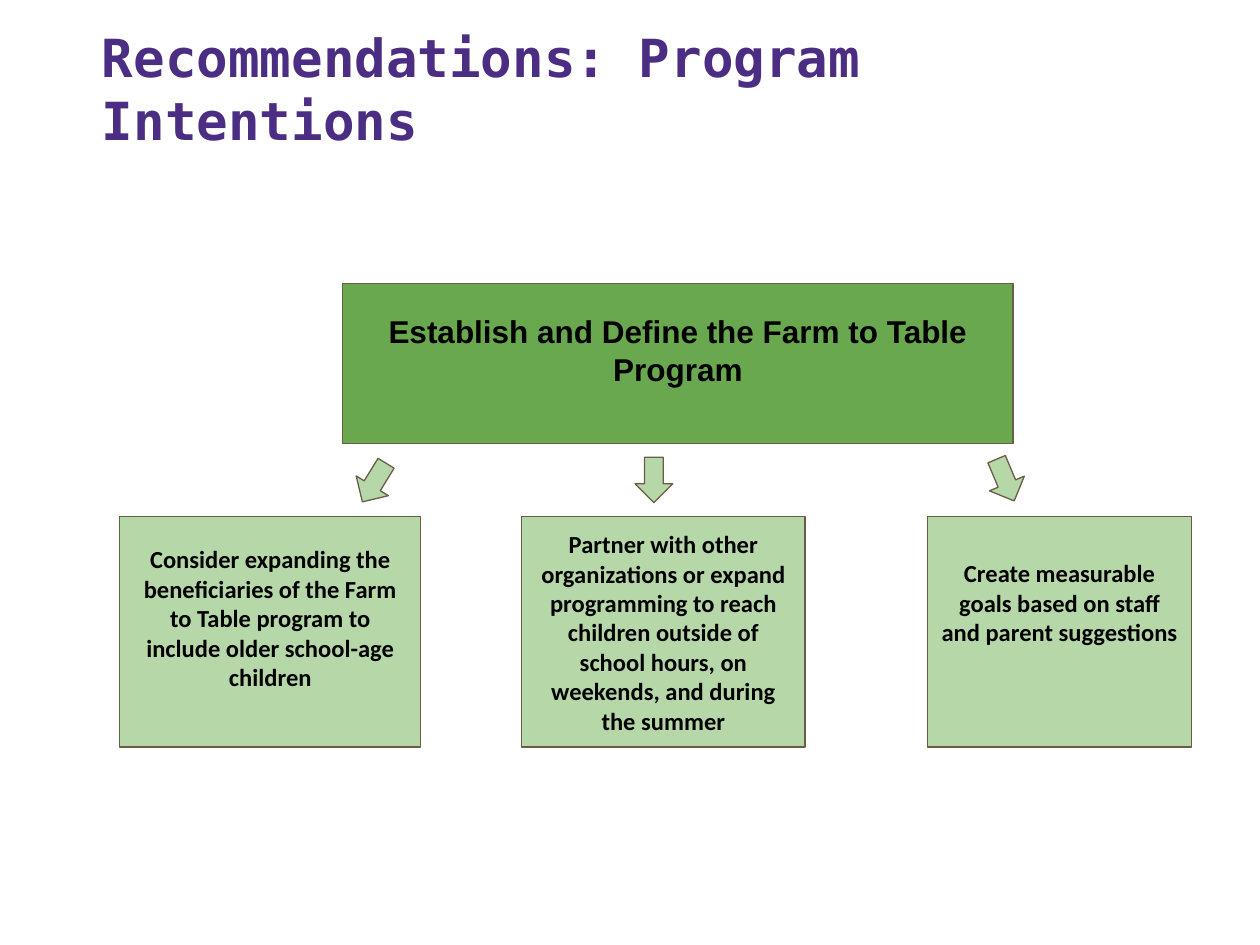
from dataclasses import dataclass

from pptx import Presentation
from pptx.dml.color import RGBColor
from pptx.enum.shapes import MSO_SHAPE as Preset
from pptx.enum.text import MSO_ANCHOR as Anchor, PP_ALIGN as Align
from pptx.util import Inches, Pt

PAGE_WIDTH, PAGE_HEIGHT = Inches(10), Inches(7.5)
PURPLE, BLACK, BROWN = "4B2E83", "000000", "695D46"
GREEN, PALE_GREEN = "6AA84F", "B6D7A8"
GOAL_TOP, GOAL_HEIGHT = 54.67, 24.4


@dataclass(frozen=True)
class Area:
    """A rectangle in percent of the page width and height."""
    left: float
    top: float
    width: float
    height: float

    def lengths(self) -> tuple[int, int, int, int]:
        return (round(PAGE_WIDTH * self.left / 100), round(PAGE_HEIGHT * self.top / 100),
                round(PAGE_WIDTH * self.width / 100), round(PAGE_HEIGHT * self.height / 100))


@dataclass(frozen=True)
class Lettering:
    font: str
    size: int
    color: str = BLACK
    align: Align = Align.CENTER


@dataclass(frozen=True)
class Card:
    text: str
    area: Area
    fill: str
    lettering: Lettering
    text_top: float  # inches from the card's top edge to its text


@dataclass(frozen=True)
class Arrow:
    left: float
    top: float
    rotation: float


TITLE = Lettering("DejaVu Sans Mono", 30, PURPLE, Align.LEFT)
HEADING = Lettering("Arial", 18)
BODY = Lettering("Calibri", 14)

CARDS = [
    Card("Establish and Define the Farm to Table Program",
         Area(27.2, 30, 53.2, 16.93), GREEN, HEADING, 0.23),
    Card("Consider expanding the beneficiaries of the Farm to Table program "
         "to include older school-age children",
         Area(9.5, GOAL_TOP, 23.9, GOAL_HEIGHT), PALE_GREEN, BODY, 0.22),
    Card("Partner with other organizations or expand programming to reach children "
         "outside of school hours, on weekends, and during the summer",
         Area(41.4, GOAL_TOP, 22.5, GOAL_HEIGHT), PALE_GREEN, BODY, 0.1),
    Card("Create measurable goals based on staff and parent suggestions",
         Area(73.6, GOAL_TOP, 21, GOAL_HEIGHT), PALE_GREEN, BODY, 0.33),
]
ARROWS = [Arrow(28.2, 48.67, 31.6), Arrow(50.4, 48.4, 0), Arrow(78.3, 48.4, 337.2)]


def rgb(color: str) -> RGBColor:
    return RGBColor.from_string(color)


def write(frame, text: str, lettering: Lettering) -> None:
    frame.word_wrap = True
    para = frame.paragraphs[0]
    para.alignment = lettering.align
    span = para.add_run()
    span.text = text
    span.font.name = lettering.font
    span.font.size = Pt(lettering.size)
    span.font.bold = True
    span.font.color.rgb = rgb(lettering.color)


def draw_shape(page, preset: Preset, area: Area, fill: str):
    shape = page.shapes.add_shape(preset, *area.lengths())
    shape.shadow.inherit = False
    shape.fill.solid()
    shape.fill.fore_color.rgb = rgb(fill)
    shape.line.color.rgb = rgb(BROWN)
    shape.line.width = Pt(0.75)
    return shape


def draw_title(page, text: str) -> None:
    box = page.shapes.add_textbox(*Area(7.1, 2.27, 89.5, 14.4).lengths())
    box.text_frame.vertical_anchor = Anchor.BOTTOM
    write(box.text_frame, text, TITLE)


def draw_card(page, card: Card) -> None:
    frame = draw_shape(page, Preset.RECTANGLE, card.area, card.fill).text_frame
    frame.vertical_anchor = Anchor.TOP
    frame.margin_left = frame.margin_right = frame.margin_bottom = Inches(0.1)
    frame.margin_top = Inches(card.text_top)
    write(frame, card.text, card.lettering)


def draw_arrow(page, arrow: Arrow) -> None:
    area = Area(arrow.left, arrow.top, 3, 4.8)
    draw_shape(page, Preset.DOWN_ARROW, area, PALE_GREEN).rotation = arrow.rotation


def main() -> None:
    deck = Presentation()
    deck.slide_width, deck.slide_height = PAGE_WIDTH, PAGE_HEIGHT
    page = deck.slides.add_slide(deck.slide_layouts[6])
    draw_title(page, "Recommendations: Program Intentions")
    for card in CARDS:
        draw_card(page, card)
    for arrow in ARROWS:
        draw_arrow(page, arrow)
    deck.save("out.pptx")


if __name__ == "__main__":
    main()
